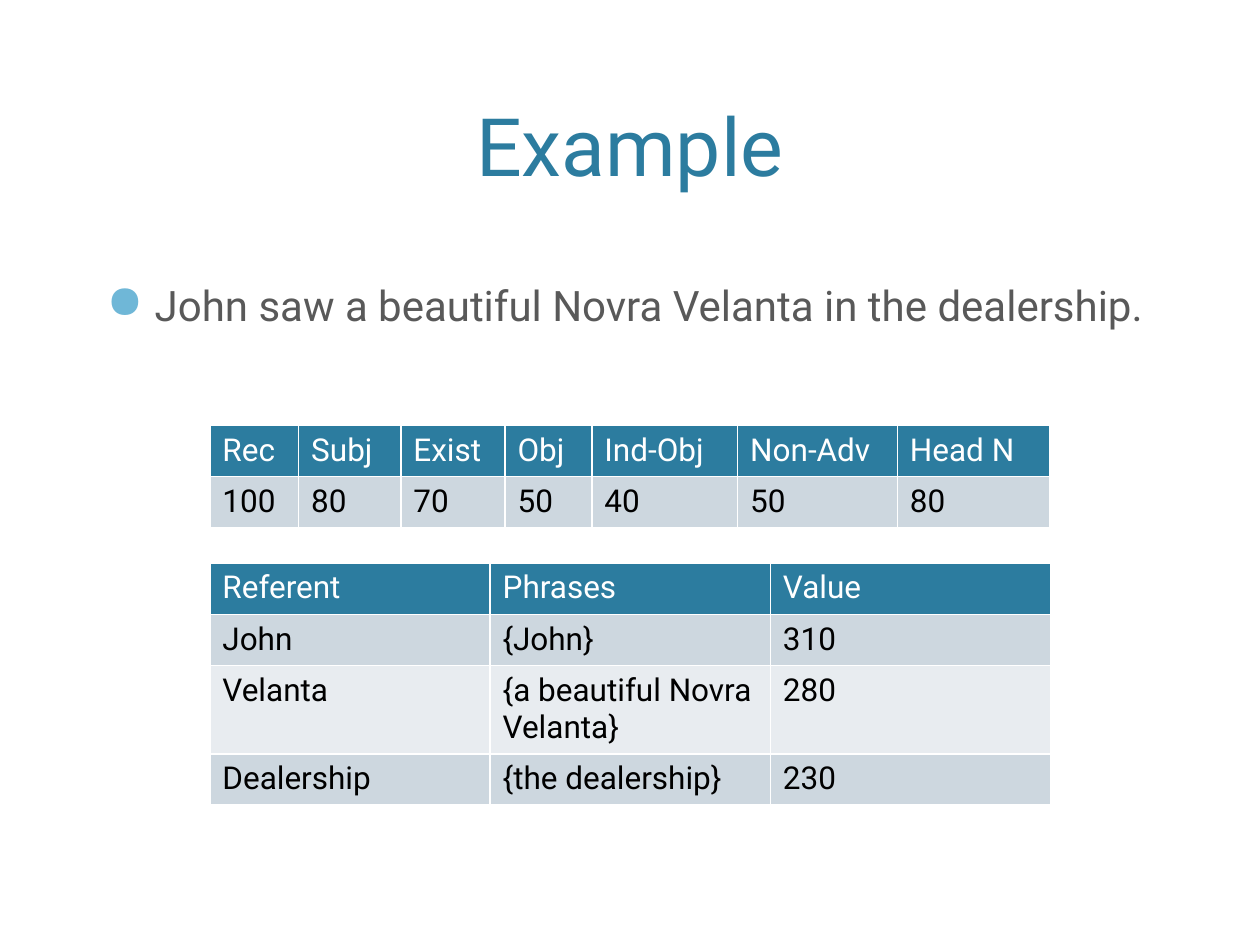
from lxml import etree
from pptx import Presentation
from pptx import util as u
from pptx.dml.color import RGBColor
from pptx.enum import text
from pptx.oxml import ns

BLUE, WHITE, BLACK = "2C7C9F", "FFFFFF", "000000"
BANDS = ["CDD7DF", "E8ECF0"]


def color(value):
    return RGBColor.from_string(value)


def style_runs(paragraph, size, value):
    for run in paragraph.runs:
        run.font.name = "Roboto"
        run.font.size = u.Pt(size)
        run.font.bold = False
        run.font.color.rgb = color(value)


presentation = Presentation()
presentation.slide_width = u.Cm(25.4)
presentation.slide_height = u.Cm(19.05)
slide = presentation.slides.add_slide(presentation.slide_layouts[6])

# Title
title = slide.shapes.add_textbox(u.Cm(1.52), u.Cm(0.3), u.Cm(22.35), u.Cm(3.71))
title.text_frame.word_wrap = True
title.text_frame.vertical_anchor = text.MSO_ANCHOR.BOTTOM
title.text_frame.text = "Example"
paragraph = title.text_frame.paragraphs[0]
paragraph.alignment = text.PP_ALIGN.CENTER
style_runs(paragraph, 46, BLUE)

# Example sentence with its bullet
body = slide.shapes.add_textbox(u.Cm(1.9), u.Cm(5.51), u.Cm(21.6), u.Cm(4.01))
body.text_frame.word_wrap = True
body.text_frame.text = "John saw a beautiful Novra Velanta in the dealership."
paragraph = body.text_frame.paragraphs[0]
paragraph.space_before = u.Pt(20)
style_runs(paragraph, 24, "595959")
properties = paragraph._p.get_or_add_pPr()
properties.set("marL", str(u.Cm(0.97)))
properties.set("indent", str(u.Cm(-0.97)))
bullet_color = etree.SubElement(properties, ns.qn("a:buClr"))
etree.SubElement(bullet_color, ns.qn("a:srgbClr"), val="6FB7D7")
etree.SubElement(properties, ns.qn("a:buSzPct"), val="110000")
etree.SubElement(properties, ns.qn("a:buChar"), char="●")

# Tables: top, column widths, rows
ROW_HEIGHT = 1.03
referents = (11.36, [5.65] * 3, [
    ["Referent", "Phrases", "Value"],
    ["John", "{John}", "310"],
    ["Velanta", "{a beautiful Novra Velanta}", "280"],
    ["Dealership", "{the dealership}", "230"],
])
weights = (8.58, [1.79, 2.06, 2.1, 1.75, 2.94, 3.22, 3.07], [
    ["Rec", "Subj", "Exist", "Obj", "Ind-Obj", "Non-Adv", "Head N"],
    ["100", "80", "70", "50", "40", "50", "80"],
])

for top, widths, rows in (referents, weights):
    table = slide.shapes.add_table(
        len(rows), len(widths), u.Cm(4.23), u.Cm(top),
        u.Cm(sum(widths)), u.Cm(ROW_HEIGHT * len(rows))).table
    for column, width in zip(table.columns, widths):
        column.width = u.Cm(width)
    for row_index, values in enumerate(rows):
        is_header = row_index == 0
        table.rows[row_index].height = u.Cm(ROW_HEIGHT)
        for column_index, value in enumerate(values):
            cell = table.cell(row_index, column_index)
            cell.text_frame.text = value
            style_runs(cell.text_frame.paragraphs[0], 18, WHITE if is_header else BLACK)
            # Borders come before the fill in the cell properties
            for side in ("lnL", "lnR", "lnT", "lnB"):
                line = etree.SubElement(cell._tc.get_or_add_tcPr(), ns.qn(f"a:{side}"),
                                        w=str(u.Pt(1)))
                line_fill = etree.SubElement(line, ns.qn("a:solidFill"))
                etree.SubElement(line_fill, ns.qn("a:srgbClr"), val=WHITE)
            cell.fill.solid()
            cell.fill.fore_color.rgb = color(BLUE if is_header else BANDS[(row_index - 1) % 2])

presentation.save("out.pptx")
